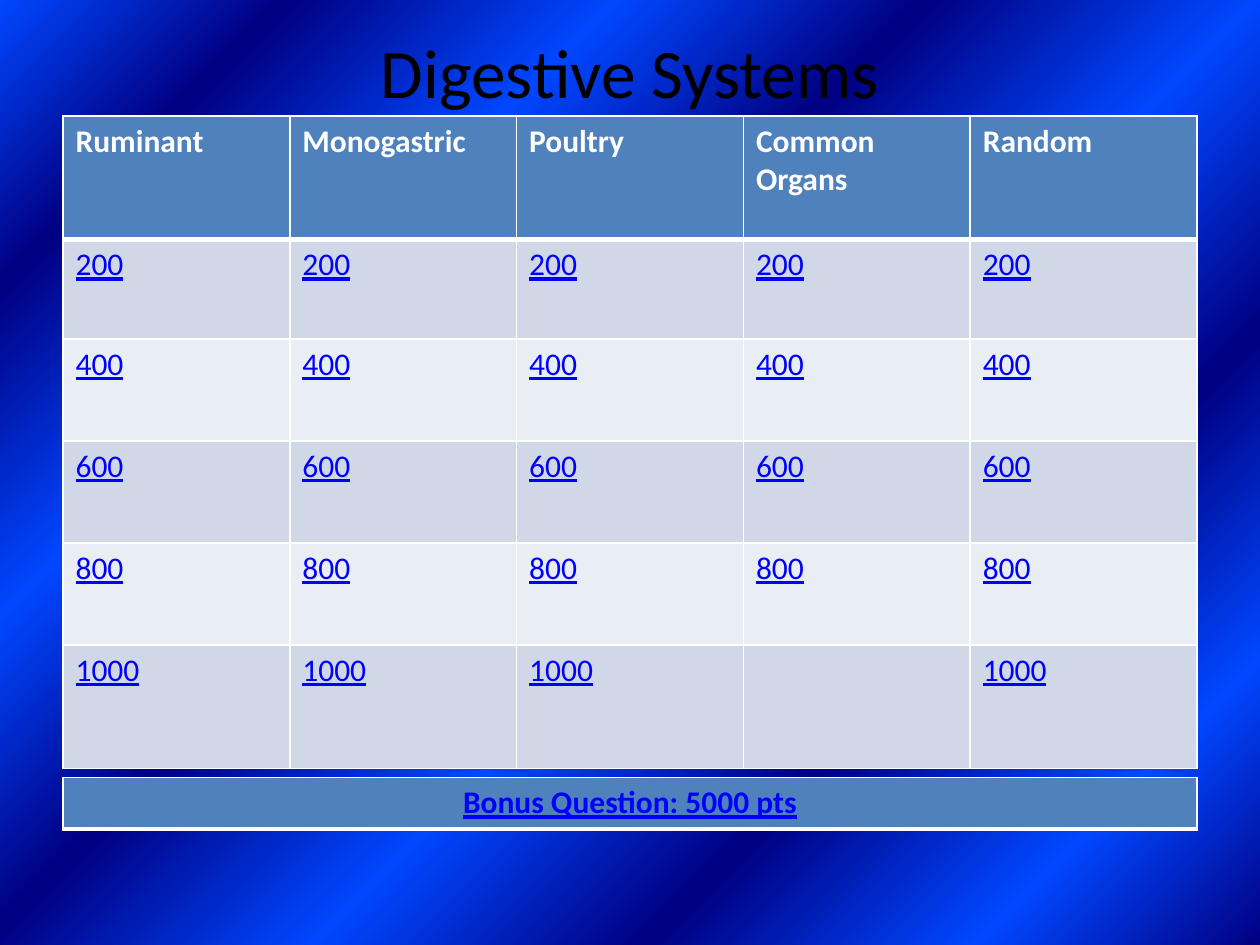
from lxml import etree
from pptx import Presentation
from pptx.dml.color import RGBColor as RGB
from pptx.enum.text import MSO_ANCHOR as Anchor, PP_ALIGN as Align
from pptx.oxml.ns import qn
from pptx.util import Inches, Pt

BLACK = RGB(0x00, 0x00, 0x00)
WHITE = RGB(0xFF, 0xFF, 0xFF)
HEADER_BLUE = RGB(0x4F, 0x81, 0xBD)
BAND_DARK = RGB(0xD0, 0xD8, 0xE8)
BAND_LIGHT = RGB(0xE9, 0xED, 0xF4)
LINK_BLUE = RGB(0x00, 0x00, 0xFF)
NAVY = RGB(0x00, 0x00, 0x82)
BRIGHT_BLUE = RGB(0x00, 0x47, 0xFF)

GRADIENT_POSITIONS = [0, 13, 28, 43, 58, 72, 87, 100]
CATEGORIES = ["Ruminant", "Monogastric", "Poultry", "Common Organs", "Random"]
POINTS = ["200", "400", "600", "800", "1000"]
ROW_HEIGHTS = [0.98, 0.79, 0.81, 0.81, 0.81, 0.98]
LEFT, WIDTH = 0.5, 9


class QuizBoard:
    """Holds the style and the current slide."""

    font_name = "Calibri"
    title_size = Pt(39.6)
    cell_size = Pt(18)
    thin, thick = Pt(1), Pt(3)

    def __init__(self, page):
        self.page = page

    def style(self, para, size, color, bold=False, underline=False, align=Align.LEFT):
        para.alignment = align
        font = para.font
        font.name, font.size, font.bold, font.underline = self.font_name, size, bold, underline
        font.color.rgb = color

    def background(self, positions, colors):
        fill = self.page.background.fill
        fill.gradient()
        gradient = self.page.background._cSld.find(".//" + qn("a:gradFill"))
        for child in list(gradient):
            gradient.remove(child)
        stops = etree.SubElement(gradient, qn("a:gsLst"))
        for index, position in enumerate(positions):
            stop = etree.SubElement(stops, qn("a:gs"), pos=str(position * 1000))
            etree.SubElement(stop, qn("a:srgbClr"), val=str(colors[index % len(colors)]))
        # Gradient spreads from the bottom right corner
        shade = etree.SubElement(gradient, qn("a:path"))
        shade.set("path", "circle")
        etree.SubElement(shade, qn("a:fillToRect"), l="100000", t="100000")

    def title(self, text, left, top, width, height):
        box = self.page.shapes.title
        box.left, box.top = Inches(left), Inches(top)
        box.width, box.height = Inches(width), Inches(height)
        frame = box.text_frame
        frame.text = text
        frame.vertical_anchor = Anchor.MIDDLE
        self.style(frame.paragraphs[0], self.title_size, BLACK, align=Align.CENTER)

    def table(self, left, top, widths, heights):
        frame = self.page.shapes.add_table(
            len(heights), len(widths), Inches(left), Inches(top),
            Inches(sum(widths)), Inches(sum(heights)))
        table = frame.table
        for column, width in zip(table.columns, widths):
            column.width = Inches(width)
        for row, height in zip(table.rows, heights):
            row.height = Inches(height)
        return table

    def cell(self, cell, text, fill, color, top=thin, bottom=thin, **look):
        cell.fill.solid()
        cell.fill.fore_color.rgb = fill
        if text:
            cell.text = text
        self.style(cell.text_frame.paragraphs[0], self.cell_size, color, **look)
        self.borders(cell, top, bottom)

    def borders(self, cell, top, bottom):
        properties = cell._tc.get_or_add_tcPr()
        sides = {"a:lnL": self.thin, "a:lnR": self.thin, "a:lnT": top, "a:lnB": bottom}
        for index, (side, width) in enumerate(sides.items()):
            line = etree.Element(qn(side), w=str(int(width)))
            solid = etree.SubElement(line, qn("a:solidFill"))
            etree.SubElement(solid, qn("a:srgbClr"), val=str(WHITE))
            properties.insert(index, line)


def main():
    deck = Presentation()
    deck.slide_width, deck.slide_height = Inches(10), Inches(7.5)
    board = QuizBoard(deck.slides.add_slide(deck.slide_layouts[5]))

    # Background and title
    board.background(GRADIENT_POSITIONS, [NAVY, BRIGHT_BLUE])
    board.title("Digestive Systems", LEFT, 0.3, WIDTH, 0.53)

    # Question grid
    count = len(CATEGORIES)
    grid = board.table(LEFT, 0.92, [WIDTH / count] * count, ROW_HEIGHTS)
    for column, category in enumerate(CATEGORIES):
        board.cell(grid.cell(0, column), category, HEADER_BLUE, WHITE,
                   bottom=board.thick, bold=True)
        for row, points in enumerate(POINTS, start=1):
            unused = category == "Common Organs" and points == "1000"
            board.cell(grid.cell(row, column), "" if unused else points,
                       BAND_DARK if row % 2 else BAND_LIGHT, LINK_BLUE,
                       top=board.thick if row == 1 else board.thin, underline=True)

    # Bonus bar
    bonus = board.table(LEFT, 6.17, [WIDTH], [0.41])
    board.cell(bonus.cell(0, 0), "Bonus Question: 5000 pts", HEADER_BLUE, LINK_BLUE,
               bottom=board.thick, bold=True, underline=True, align=Align.CENTER)

    deck.save("out.pptx")


if __name__ == "__main__":
    main()
